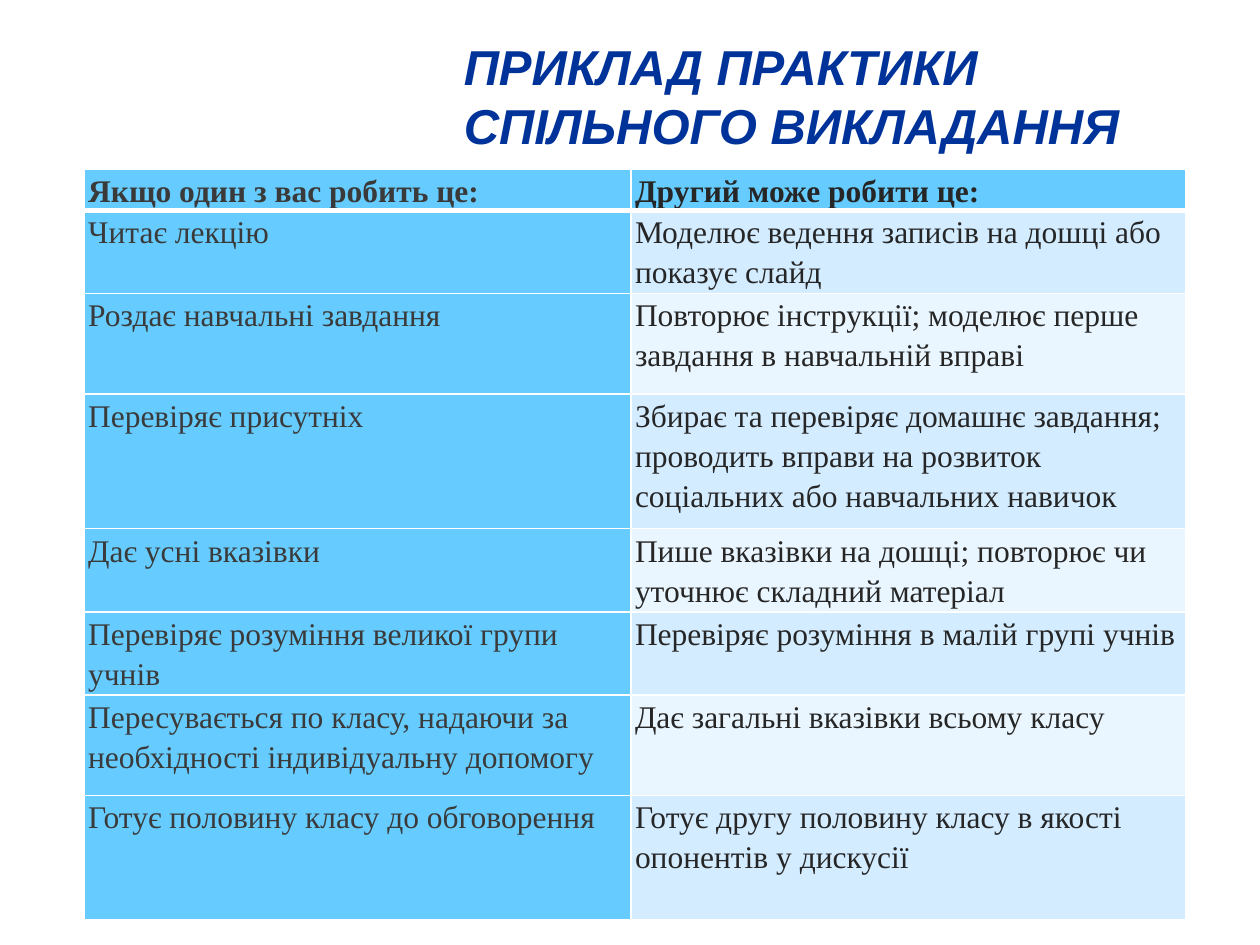
from dataclasses import dataclass

from lxml import etree
from pptx import Presentation
from pptx import util as u
from pptx.dml.color import RGBColor
from pptx.enum import text
from pptx.oxml import ns


@dataclass(frozen=True)
class Theme:
    """Colours, fonts and type sizes of the slide."""
    title_color: str = "003399"
    left_text: str = "3A3A3A"
    right_text: str = "262626"
    accent: str = "66CCFF"
    bands: tuple = ("EAF6FF", "D3ECFF")
    border: str = "FFFFFF"
    title_font: str = "Arial"
    table_font: str = "Times New Roman"
    title_size: int = 28
    table_size: int = 18


class Page:
    """Holds the theme and the current slide and adds elements to it."""

    def __init__(self, deck, theme):
        self.theme = theme
        self.slide = deck.slides.add_slide(deck.slide_layouts[5])

    def style(self, para, name, size, color, bold, italic=False):
        font = para.font
        font.name, font.size = name, u.Pt(size)
        font.bold, font.italic = bold, italic
        font.color.rgb = RGBColor.from_string(color)

    def title(self, words, left, top, width, height):
        box = self.slide.shapes.title
        box.left, box.top = u.Pt(left), u.Pt(top)
        box.width, box.height = u.Pt(width), u.Pt(height)
        frame = box.text_frame
        frame.text = words
        frame.word_wrap = True
        frame.auto_size = text.MSO_AUTO_SIZE.NONE
        frame.vertical_anchor = text.MSO_ANCHOR.MIDDLE
        para = frame.paragraphs[0]
        para.alignment = text.PP_ALIGN.LEFT
        self.style(para, self.theme.title_font, self.theme.title_size,
                   self.theme.title_color, True, True)

    def borders(self, cell, widths):
        properties = cell._tc.get_or_add_tcPr()
        for side, width in widths.items():
            line = etree.SubElement(properties, ns.qn(f"a:ln{side}"), w=str(u.Pt(width)))
            fill = etree.SubElement(line, ns.qn("a:solidFill"))
            etree.SubElement(fill, ns.qn("a:srgbClr"), val=self.theme.border)

    def cell(self, cell, words, row, column):
        theme = self.theme
        self.borders(cell, {"L": 1, "R": 1, "T": 3 if row == 1 else 1,
                            "B": 3 if row == 0 else 1})
        shaded = row == 0 or column == 0
        cell.fill.solid()
        cell.fill.fore_color.rgb = RGBColor.from_string(
            theme.accent if shaded else theme.bands[row % 2])
        cell.margin_left = cell.margin_right = u.Pt(2.2)
        cell.margin_top = cell.margin_bottom = 0
        cell.text = words
        para = cell.text_frame.paragraphs[0]
        para.line_spacing = 1.15
        self.style(para, theme.table_font, theme.table_size,
                   theme.right_text if column else theme.left_text, row == 0)

    def table(self, rows, left, top, widths, heights):
        table = self.slide.shapes.add_table(
            len(rows), len(widths), u.Pt(left), u.Pt(top),
            u.Pt(sum(widths)), u.Pt(sum(heights))).table
        for column, width in zip(table.columns, widths):
            column.width = u.Pt(width)
        for row, height in zip(table.rows, heights):
            row.height = u.Pt(height)
        for r, row in enumerate(rows):
            for c, words in enumerate(row):
                self.cell(table.cell(r, c), words, r, c)


ROWS = [
    ("Якщо один з вас робить це:", "Другий може робити це:"),
    ("Читає лекцію", "Моделює ведення записів на дошці або показує слайд"),
    ("Роздає навчальні завдання",
     "Повторює інструкції; моделює перше завдання в навчальній вправі"),
    ("Перевіряє присутніх",
     "Збирає та перевіряє домашнє завдання; проводить вправи на розвиток "
     "соціальних або навчальних навичок"),
    ("Дає усні вказівки",
     "Пише вказівки на дошці; повторює чи уточнює складний матеріал"),
    ("Перевіряє розуміння великої групи учнів",
     "Перевіряє розуміння в малій групі учнів"),
    ("Пересувається по класу, надаючи за необхідності індивідуальну допомогу",
     "Дає загальні вказівки всьому класу"),
    ("Готує половину класу до обговорення",
     "Готує другу половину класу в якості опонентів у дискусії"),
]


def main():
    deck = Presentation()
    deck.slide_width, deck.slide_height = u.Pt(720), u.Pt(540)
    page = Page(deck, Theme())
    page.title("ПРИКЛАД ПРАКТИКИ СПІЛЬНОГО ВИКЛАДАННЯ", 257.8, 26, 425.5, 57)
    page.table(ROWS, 48.2, 96.5, (312.5, 316.8),
               (23.8, 47.5, 57.4, 77, 47.5, 47.5, 57.4, 71.3))
    deck.save("out.pptx")


if __name__ == "__main__":
    main()
